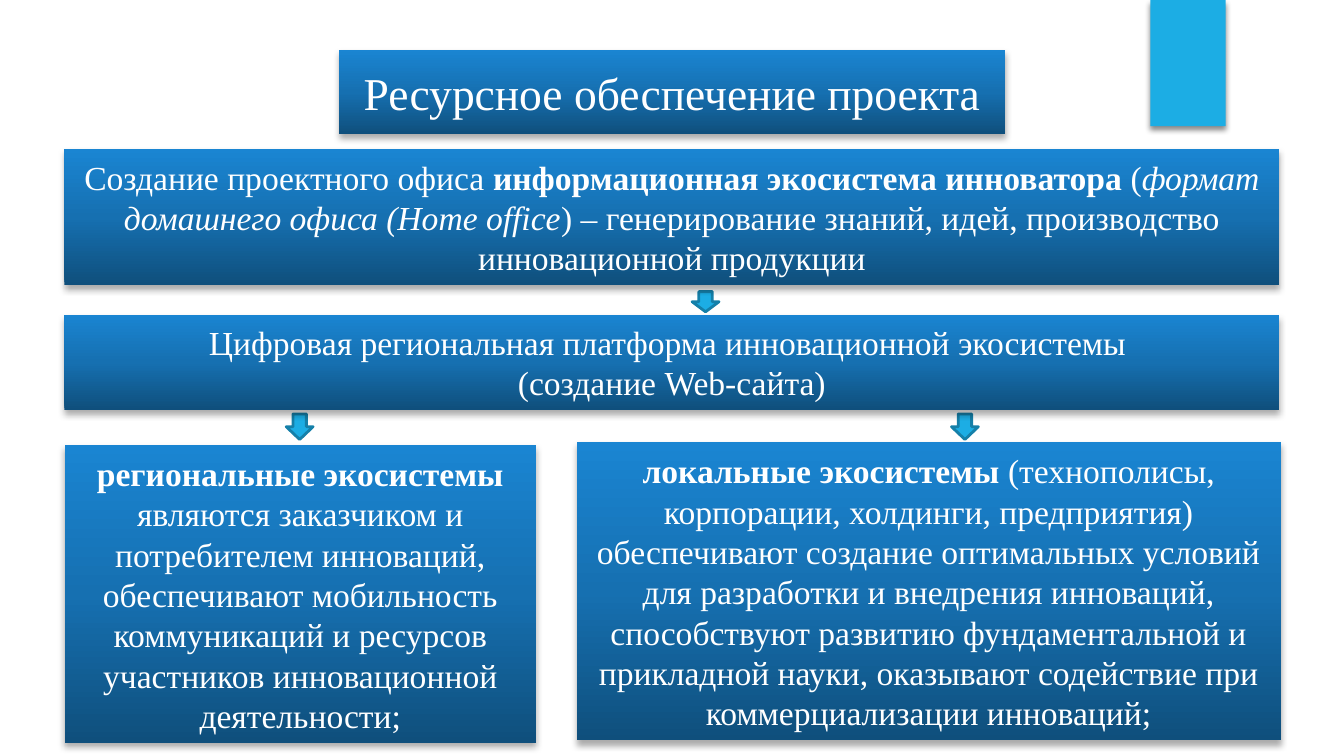
from copy import deepcopy

from lxml.etree import SubElement
from pptx import Presentation
from pptx.dml.color import RGBColor
from pptx.enum.shapes import MSO_SHAPE as Shape
from pptx.enum.text import MSO_ANCHOR as Anchor, MSO_AUTO_SIZE as AutoSize, PP_ALIGN as Align
from pptx.oxml.ns import qn
from pptx.util import Inches, Pt

COLOURS = {
    "accent": "1CADE4", "outline": "1580A9", "text": "FFFFFF", "shadow": "000000",
    "dark": "0F4F7C", "middle": "1670B1", "light": "1A85D2",
}
COLUMNS, ROWS = 100, 56.25  # square grid cells


def colour(name):
    return RGBColor.from_string(COLOURS[name])


class SlideStyle:
    font = "Times New Roman"
    body_size = 18

    def __init__(self, deck):
        self.cell_width = deck.slide_width / COLUMNS
        self.cell_height = deck.slide_height / ROWS
        self.page = deck.slides.add_slide(deck.slide_layouts[6])

    def shape(self, kind, left, top, width, height):
        box = self.page.shapes.add_shape(
            kind,
            round(left * self.cell_width), round(top * self.cell_height),
            round(width * self.cell_width), round(height * self.cell_height))
        box.fill.solid()
        box.fill.fore_color.rgb = colour("accent")
        box.line.fill.background()
        box.shadow.inherit = False
        return box

    def drop_shadow(self, box, opacity, blur, distance):
        effects = box._element.spPr.find(qn("a:effectLst"))
        shadow = SubElement(effects, qn("a:outerShdw"), blurRad=str(Pt(blur)),
                            dist=str(Pt(distance)), dir="5400000", rotWithShape="0")
        tint = SubElement(shadow, qn("a:srgbClr"), val=COLOURS["shadow"])
        SubElement(tint, qn("a:alpha"), val=str(opacity * 1000))

    def gradient(self, box):
        box.fill.gradient()
        box.fill.gradient_angle = 90
        stops = box._element.spPr.find(qn("a:gradFill")).find(qn("a:gsLst"))
        stops.insert(1, deepcopy(stops[0]))
        for stop, position, name in zip(box.fill.gradient_stops, (0, 0.5, 1),
                                        ("dark", "middle", "light")):
            stop.position = position
            stop.color.rgb = colour(name)

    def ribbon(self, *place):
        self.drop_shadow(self.shape(Shape.RECTANGLE, *place), 45, 3, 2)

    def arrow(self, *place):
        arrow = self.shape(Shape.DOWN_ARROW, *place)
        arrow.line.color.rgb = colour("outline")
        arrow.line.width = Pt(1.5)

    def panel(self, place, paragraphs, size=body_size):
        """Each paragraph is a list of (text, style); style is '', 'b' or 'i'."""
        box = self.shape(Shape.RECTANGLE, *place)
        self.gradient(box)
        self.drop_shadow(box, 32, 3.5, 2.2)
        frame = box.text_frame
        frame.word_wrap = True
        frame.auto_size = AutoSize.NONE
        frame.vertical_anchor = Anchor.MIDDLE
        for index, spans in enumerate(paragraphs):
            para = frame.add_paragraph() if index else frame.paragraphs[0]
            para.alignment = Align.CENTER
            for text, style in spans:
                span = para.add_run()
                span.text = text
                span.font.name = self.font
                span.font.size = Pt(size)
                span.font.color.rgb = colour("text")
                span.font.bold = style == "b"
                span.font.italic = style == "i"


def main():
    deck = Presentation()
    deck.slide_width = Inches(10)
    deck.slide_height = Inches(10 * 9 / 16)
    slide = SlideStyle(deck)

    # Corner ribbon
    slide.ribbon(85.6, 0, 5.6, 9.4)

    # Arrows between the levels
    slide.arrow(51.5, 21.7, 2, 1.5)
    for left in (21.3, 70.8):
        slide.arrow(left, 30.8, 2, 1.9)

    # Title
    slide.panel((25.2, 3.7, 49.6, 6.3), [[("Ресурсное обеспечение проекта", "")]], size=24.4)

    # Full-width levels
    margin, full = 4.8, 90.4
    slide.panel((margin, 11.1, full, 10.1), [[
        ("Создание проектного офиса ", ""),
        ("информационная экосистема инноватора ", "b"),
        ("(", ""),
        ("формат домашнего офиса (Home office", "i"),
        (") – генерирование знаний, идей, производство инновационной продукции", ""),
    ]])
    slide.panel((margin, 23.4, full, 7.1), [
        [("Цифровая региональная платформа инновационной экосистемы ", "")],
        [("(создание Web-сайта)", "")],
    ])

    # Regional and local ecosystems
    slide.panel((margin, 33.1, 35.1, 22.2), [[
        ("региональные экосистемы ", "b"),
        ("являются заказчиком и потребителем инноваций, обеспечивают мобильность "
         "коммуникаций и ресурсов участников инновационной деятельности;", ""),
    ]])
    slide.panel((42.9, 32.9, 52.4, 22.2), [[
        ("локальные экосистемы ", "b"),
        ("(технополисы, корпорации, холдинги, предприятия) обеспечивают создание "
         "оптимальных условий для разработки и внедрения инноваций, способствуют "
         "развитию фундаментальной и прикладной науки, оказывают содействие при "
         "коммерциализации инноваций;", ""),
    ]])

    deck.save("out.pptx")


if __name__ == "__main__":
    main()
